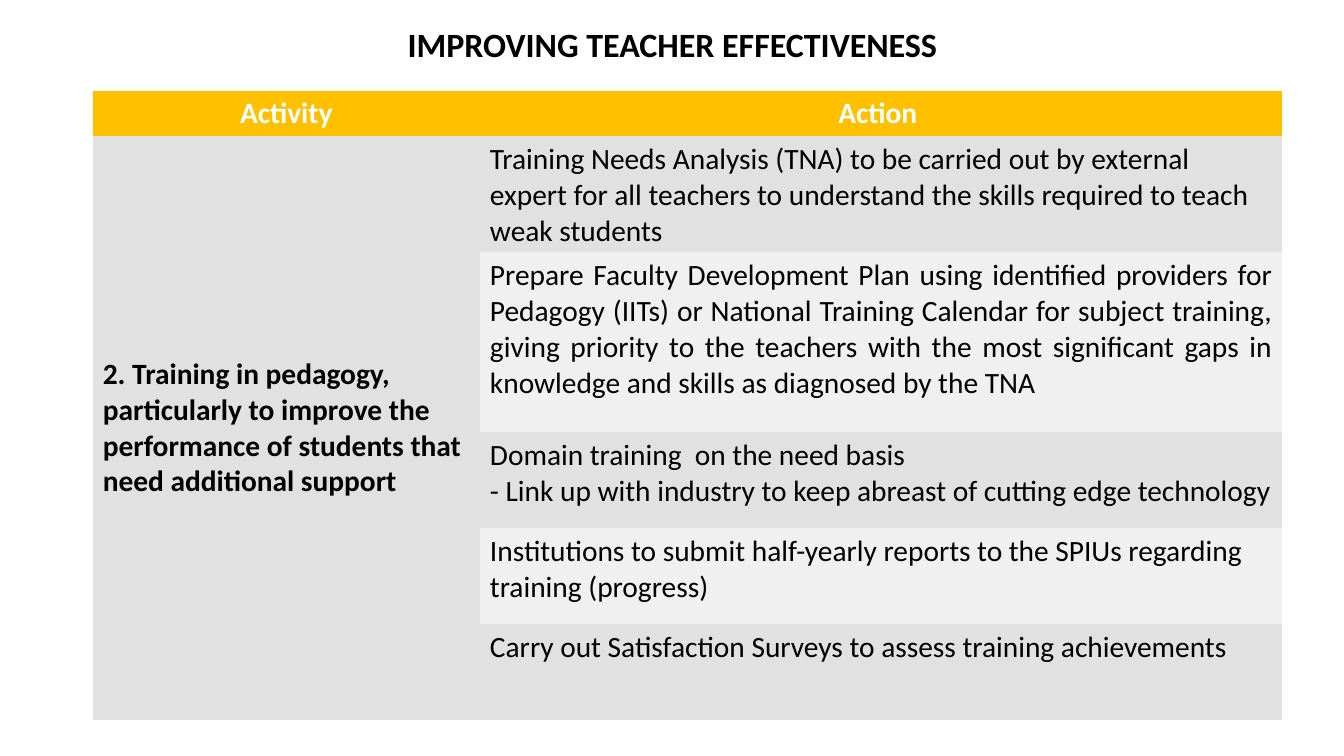
import pptx
import pptx.dml.color
import pptx.enum.text
import pptx.util
from pptx.dml.color import RGBColor
from pptx.enum.text import MSO_ANCHOR, PP_ALIGN
from pptx.util import Inches

BLACK = RGBColor(0x00, 0x00, 0x00)
WHITE = RGBColor(0xFF, 0xFF, 0xFF)
AMBER = RGBColor(0xFF, 0xC0, 0x00)
GREY = RGBColor(0xE1, 0xE1, 0xE1)
PALE_GREY = RGBColor(0xF0, 0xF0, 0xF0)
FONT = "Calibri"
PLAIN_TABLE_STYLE = "{2D5ABB26-0587-4C30-8999-92F81FD0307C}"

TITLE = "IMPROVING TEACHER EFFECTIVENESS"
HEADINGS = ["Activity", "Action "]
ACTIVITY = (
    "2. Training in pedagogy, particularly to improve the performance "
    "of students that need additional support"
)
ACTIONS = [
    "Training Needs Analysis (TNA) to be carried out by external expert for all "
    "teachers to understand the skills required to teach weak students",
    "Prepare Faculty Development Plan using identified providers for Pedagogy (IITs) "
    "or National Training Calendar for subject training, giving priority to the "
    "teachers with the most significant gaps in knowledge and skills as diagnosed "
    "by the TNA",
    "Domain training  on the need basis\n"
    "- Link up with industry to keep abreast of cutting edge technology",
    "Institutions to submit half-yearly reports to the SPIUs regarding training (progress)",
    "Carry out Satisfaction Surveys to assess training achievements",
]
JUSTIFIED_ACTION = 1
COLUMN_WIDTHS = [3.84, 7.96]
ROW_HEIGHTS = [0.44, 1.11, 1.79, 0.95, 0.95, 0.95]


def write_text(frame, text, size, color=BLACK, bold=False, align=PP_ALIGN.LEFT):
    """Fill a text frame and format each of its paragraphs."""
    frame.text = text
    frame.word_wrap = True
    for paragraph in frame.paragraphs:
        paragraph.alignment = align
        paragraph.font.name = FONT
        paragraph.font.size = pptx.util.Pt(size)
        paragraph.font.bold = bold
        paragraph.font.color.rgb = color


def add_title(slide):
    """Add the centred heading above the table."""
    heading = slide.shapes.add_textbox(
        Inches(0.92), Inches(0.15), Inches(11.5), Inches(0.57)
    )
    heading.text_frame.vertical_anchor = MSO_ANCHOR.MIDDLE
    write_text(heading.text_frame, TITLE, 24.3, bold=True, align=PP_ALIGN.CENTER)


def fill_cell(cell, text, fill, **text_format):
    """Colour a table cell and write its text."""
    cell.fill.solid()
    cell.fill.fore_color.rgb = fill
    write_text(cell.text_frame, text, 21, **text_format)


def add_plan_table(slide):
    """Add the table of training activity and actions."""
    frame = slide.shapes.add_table(
        len(ROW_HEIGHTS), len(COLUMN_WIDTHS),
        Inches(0.92), Inches(0.9),
        Inches(sum(COLUMN_WIDTHS)), Inches(sum(ROW_HEIGHTS)),
    )
    plan = frame.table
    plan._tbl.tblPr.find(pptx.oxml.ns.qn("a:tableStyleId")).text = PLAIN_TABLE_STYLE
    for column, width in zip(plan.columns, COLUMN_WIDTHS):
        column.width = Inches(width)
    for row, height in zip(plan.rows, ROW_HEIGHTS):
        row.height = Inches(height)

    for index, heading in enumerate(HEADINGS):
        fill_cell(plan.cell(0, index), heading, AMBER,
                  color=WHITE, bold=True, align=PP_ALIGN.CENTER)

    activity = plan.cell(1, 0)
    activity.merge(plan.cell(len(ACTIONS), 0))
    activity.vertical_anchor = MSO_ANCHOR.MIDDLE
    fill_cell(activity, ACTIVITY, GREY, bold=True)

    for index, action in enumerate(ACTIONS):
        band = PALE_GREY if index % 2 else GREY
        align = PP_ALIGN.JUSTIFY if index == JUSTIFIED_ACTION else PP_ALIGN.LEFT
        fill_cell(plan.cell(index + 1, 1), action, band, align=align)


def main():
    """Build the slide and save it."""
    deck = pptx.Presentation()
    deck.slide_width = Inches(13.33)
    deck.slide_height = Inches(7.5)
    slide = deck.slides.add_slide(deck.slide_layouts[6])
    add_title(slide)
    add_plan_table(slide)
    deck.save("out.pptx")


if __name__ == "__main__":
    main()
